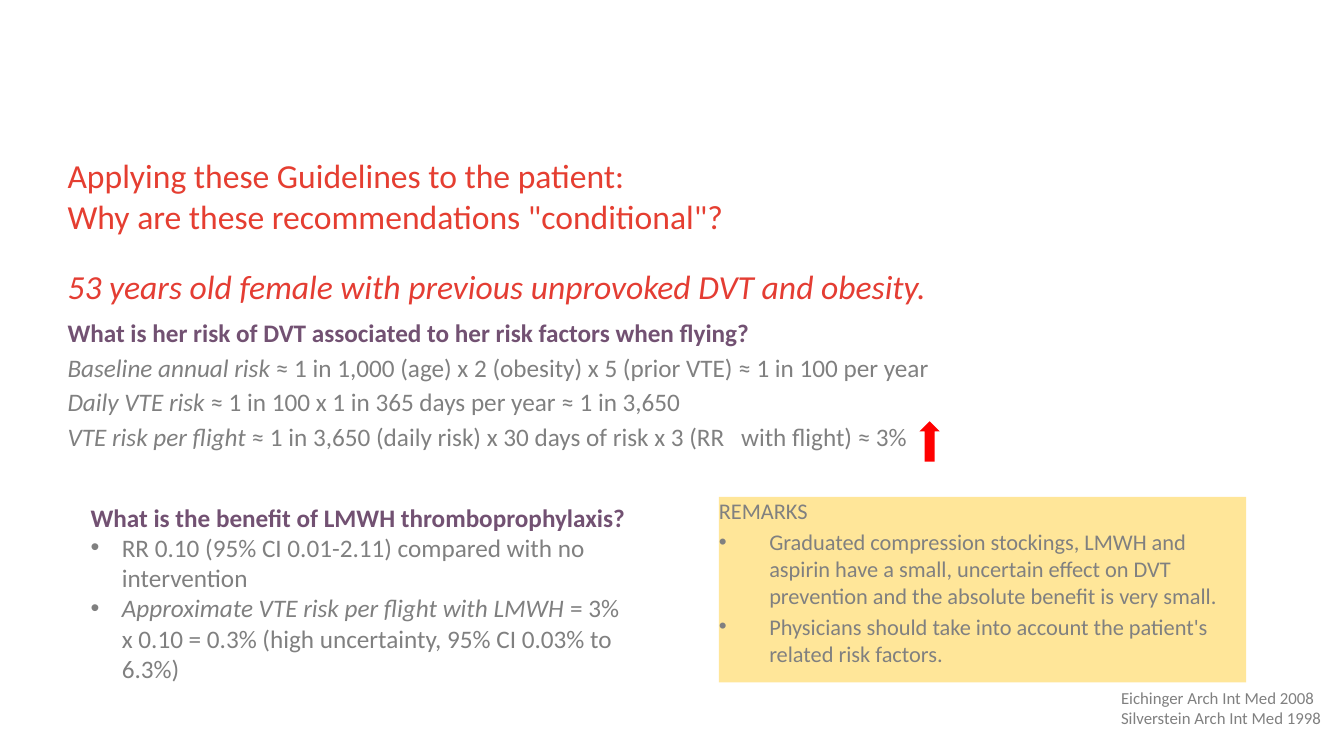
from dataclasses import dataclass

from lxml import etree
from pptx import Presentation
from pptx.dml.color import RGBColor
from pptx.enum.shapes import MSO_SHAPE
from pptx.enum.text import MSO_ANCHOR, PP_ALIGN
from pptx.oxml.ns import qn
from pptx.util import Inches, Pt

RECTANGLE = MSO_SHAPE.RECTANGLE
UP_ARROW = MSO_SHAPE.UP_ARROW
TOP = MSO_ANCHOR.TOP
LEFT = PP_ALIGN.LEFT


@dataclass(frozen=True)
class Theme:
    font: str = "Calibri"
    title: str = "E53E31"
    patient: str = "E43D33"
    question: str = "725172"
    text: str = "808080"
    remarks: str = "FFE699"
    arrow: str = "FF0000"
    title_size: int = 24
    body_size: int = 18
    remarks_size: int = 16
    source_size: int = 12


theme = Theme()


def add_text(frame, *parts, size=theme.body_size, color=theme.text, bold=False,
             space_before=0, indent=0, tab=0):
    """Append a paragraph of (text, italic) parts; an indent also makes it a bullet."""
    paragraph = frame.paragraphs[0]
    if paragraph.runs:
        paragraph = frame.add_paragraph()
    paragraph.alignment = LEFT
    paragraph.space_before = Pt(space_before)
    properties = paragraph._p.get_or_add_pPr()
    if indent:
        properties.set("marL", str(Inches(indent)))
        properties.set("indent", str(-Inches(indent)))
        etree.SubElement(properties, qn("a:buFont"), typeface="Arial")
        etree.SubElement(properties, qn("a:buChar"), char="•")
    if tab:
        tabs = etree.SubElement(properties, qn("a:tabLst"))
        etree.SubElement(tabs, qn("a:tab"), pos=str(Inches(tab)), algn="l")
    for text, italic in parts:
        run = paragraph.add_run()
        run.text = text
        run.font.name = theme.font
        run.font.size = Pt(size)
        run.font.bold = bold
        run.font.italic = italic
        run.font.color.rgb = RGBColor.from_string(color)


def prepare_frame(shape, margins):
    frame = shape.text_frame
    frame.word_wrap = True
    frame.vertical_anchor = TOP
    if not margins:
        frame.margin_left = frame.margin_right = 0
        frame.margin_top = frame.margin_bottom = 0
    return frame


presentation = Presentation()
presentation.slide_width = Inches(13.33)
presentation.slide_height = Inches(7.5)
slide = presentation.slides.add_slide(presentation.slide_layouts[6])
shapes = slide.shapes

# Title
title_box = shapes.add_textbox(Inches(0.67), Inches(1.54), Inches(9.26), Inches(0.82))
title = prepare_frame(title_box, margins=False)
for line in ("Applying these Guidelines to the patient:",
             'Why are these recommendations "conditional"?'):
    add_text(title, (line, False), size=theme.title_size, color=theme.title)

# Patient and risk estimate
risk_box = shapes.add_textbox(Inches(0.67), Inches(2.64), Inches(12), Inches(2))
risk = prepare_frame(risk_box, margins=False)
add_text(risk, ("53 years old female with previous unprovoked DVT and obesity.", True),
         size=theme.title_size, color=theme.patient)
add_text(risk, ("What is her risk of DVT associated to her risk factors when flying?", False),
         color=theme.question, bold=True, space_before=8)
for label, estimate in (
    ("Baseline annual risk ",
     "≈ 1 in 1,000 (age) x 2 (obesity) x 5 (prior VTE) ≈ 1 in 100 per year"),
    ("Daily VTE risk ", "≈ 1 in 100 x 1 in 365 days per year ≈ 1 in 3,650"),
    ("VTE risk per flight",
     " ≈ 1 in 3,650 (daily risk) x 30 days of risk x 3 (RR\twith flight) ≈ 3%"),
):
    add_text(risk, (label, True), (estimate, False), space_before=3,
             tab=6.68 if "\t" in estimate else 0)

arrow = shapes.add_shape(UP_ARROW, Inches(9.12), Inches(4.18), Inches(0.2), Inches(0.4))

# Benefit of prophylaxis
benefit_box = shapes.add_textbox(Inches(0.8), Inches(4.93), Inches(5.52), Inches(1.92))
benefit = prepare_frame(benefit_box, margins=True)
add_text(benefit, ("What is the benefit of LMWH thromboprophylaxis?", False),
         color=theme.question, bold=True)
add_text(benefit, ("RR 0.10 (95% CI 0.01-2.11) compared with no intervention", False),
         indent=0.31)
add_text(benefit, ("Approximate VTE risk per flight with LMWH ", True),
         ("= 3% x 0.10 = 0.3% (high uncertainty, 95% CI 0.03% to 6.3%)", False),
         indent=0.31)

# Sources
source_box = shapes.add_textbox(Inches(11.02), Inches(6.77), Inches(2.31), Inches(0.5))
sources = prepare_frame(source_box, margins=True)
for source in ("Eichinger Arch Int Med 2008", "Silverstein Arch Int Med 1998"):
    add_text(sources, (source, False), size=theme.source_size)

# Remarks
remarks_box = shapes.add_shape(RECTANGLE, Inches(7.13), Inches(4.93), Inches(5.23), Inches(1.84))
remarks = prepare_frame(remarks_box, margins=False)
add_text(remarks, ("REMARKS", False), size=theme.remarks_size)
for remark in (
    "Graduated compression stockings, LMWH and aspirin have a small, uncertain effect "
    "on DVT prevention and the absolute benefit is very small.",
    "Physicians should take into account the patient's related risk factors.",
):
    add_text(remarks, (remark, False), size=theme.remarks_size, space_before=3, indent=0.5)

for shape, color in ((arrow, theme.arrow), (remarks_box, theme.remarks)):
    shape.shadow.inherit = False
    shape.fill.solid()
    shape.fill.fore_color.rgb = RGBColor.from_string(color)
    shape.line.fill.background()

presentation.save("out.pptx")
